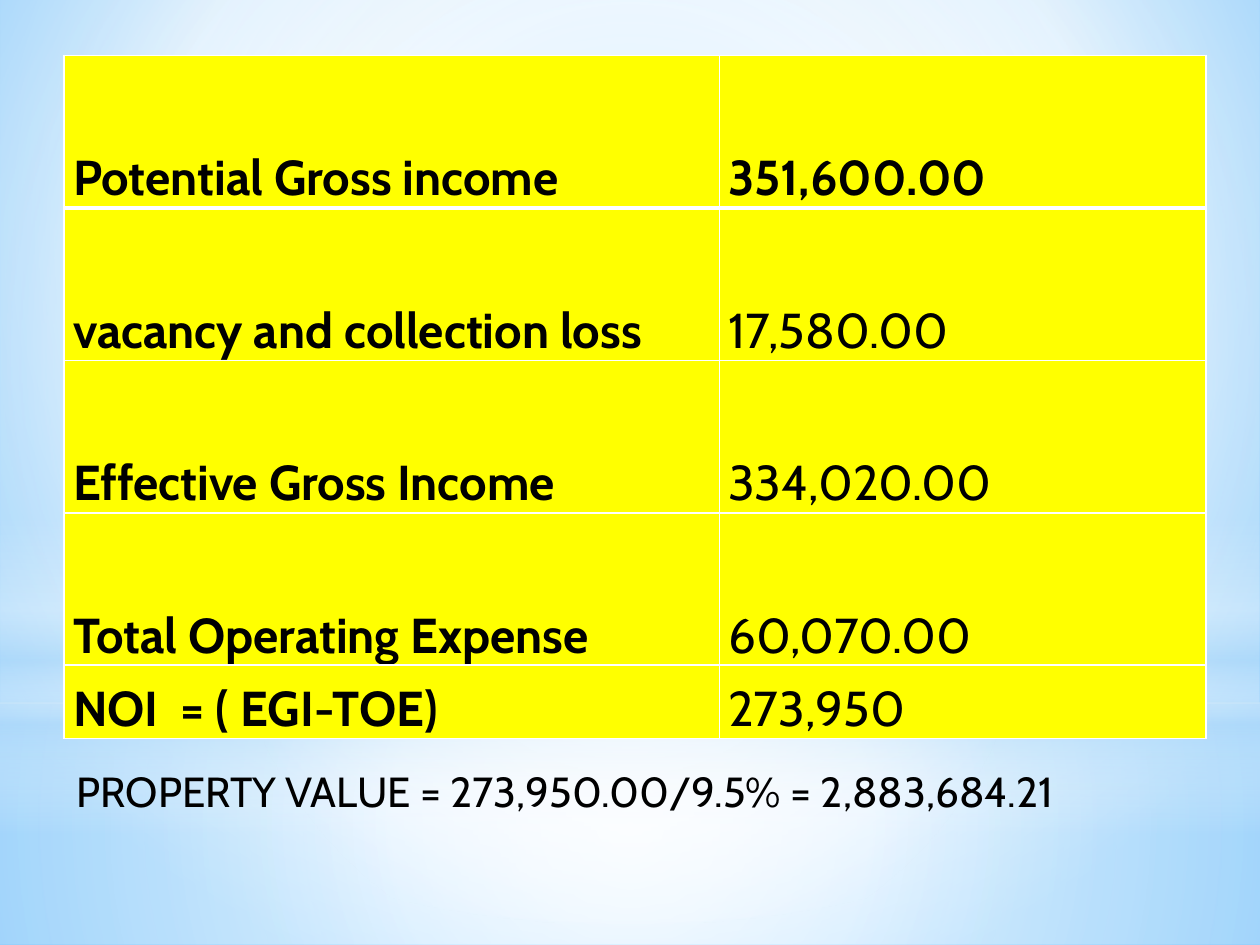
from lxml import etree
from pptx import Presentation
from pptx import util as u
from pptx.dml.color import RGBColor
from pptx.enum import shapes, text
from pptx.oxml.ns import qn

COLORS = {"deep": "5BB9FF", "sky": "9ED5FF", "pale": "B4DCFA", "white": "FFFFFF",
          "yellow": "FFFF00", "black": "000000"}
ROWS = [("Potential Gross income ", "351,600.00"),
        ("vacancy and collection loss ", "17,580.00"),
        ("Effective Gross Income", "334,020.00"),
        ("Total Operating Expense ", "60,070.00"),
        ("NOI  = ( EGI-TOE) ", "273,950")]
CENTER = (50, 50, 50, 50)


def write(frame, content, size, bold=False, align=None, spacing=None):
    """Put one formatted paragraph into a text frame."""
    paragraph = frame.paragraphs[0]
    paragraph.alignment = align
    paragraph.line_spacing = spacing
    run = paragraph.add_run()
    run.text = content
    font = run.font
    font.name, font.size, font.bold = "Cabin", u.Pt(size), bold
    font.color.rgb = RGBColor.from_string(COLORS["black"])


def add_color(parent, color, opacity=100):
    """Append a colour element with its opacity in percent."""
    node = etree.SubElement(parent, qn("a:srgbClr"), val=COLORS[color])
    if opacity < 100:
        etree.SubElement(node, qn("a:alpha"), val=str(opacity * 1000))


def paint_gradient(fill, owner, stops, focus=None):
    """Fill with a circular gradient around a focus, or with a vertical one."""
    fill.gradient()
    gradient = next(owner.iter(qn("a:gradFill")))
    for child in list(gradient):
        gradient.remove(child)
    stop_list = etree.SubElement(gradient, qn("a:gsLst"))
    for position, color, opacity in stops:
        stop = etree.SubElement(stop_list, qn("a:gs"), pos=str(position * 1000))
        add_color(stop, color, opacity)
    if focus:
        circle = etree.SubElement(gradient, qn("a:path"), path="circle")
        sides = {side: str(value * 1000) for side, value in zip("ltrb", focus)}
        etree.SubElement(circle, qn("a:fillToRect"), **sides)
    else:
        etree.SubElement(gradient, qn("a:lin"), ang="5400000", scaled="0")


class SlideBuilder:
    """Holds the current slide and its style."""

    def __init__(self, slide):
        """Keep the slide to draw on."""
        self.slide = slide

    def background(self, stops, focus):
        """Paint the slide background."""
        paint_gradient(self.slide.background.fill, self.slide.element, stops, focus)

    def glow(self, kind, top, height, stops, focus=None):
        """Add a full-width shape with a translucent gradient."""
        shape = self.slide.shapes.add_shape(
            kind, 0, u.Inches(top), u.Inches(10), u.Inches(height))
        shape.shadow.inherit = False
        shape.line.fill.background()
        paint_gradient(shape.fill, shape.element, stops, focus)

    def border(self, cell, side, width):
        """Add one white border to a cell."""
        properties = cell._tc.get_or_add_tcPr()
        line = etree.SubElement(properties, qn(f"a:ln{side}"), w=str(u.Pt(width)))
        add_color(etree.SubElement(line, qn("a:solidFill")), "white")

    def table(self, left, top, widths, heights, rows):
        """Add the income table with its labels in bold."""
        table = self.slide.shapes.add_table(
            len(rows), len(widths), u.Inches(left), u.Inches(top),
            u.Inches(sum(widths)), u.Inches(sum(heights))).table
        for column, width in zip(table.columns, widths):
            column.width = u.Inches(width)
        for row, height in zip(table.rows, heights):
            row.height = u.Inches(height)
        for r, values in enumerate(rows):
            for c, value in enumerate(values):
                cell = table.cell(r, c)
                cell.margin_left = cell.margin_right = u.Inches(0.07)
                cell.margin_top = cell.margin_bottom = 0
                cell.vertical_anchor = text.MSO_ANCHOR.BOTTOM
                widths_by_side = {"L": 1, "R": 1, "T": 3 if r == 1 else 1,
                                  "B": 3 if r == 0 else 1}
                for side, width in widths_by_side.items():
                    self.border(cell, side, width)
                cell.fill.solid()
                cell.fill.fore_color.rgb = RGBColor.from_string(COLORS["yellow"])
                write(cell.text_frame, value, 28, bold=r == 0 or c == 0,
                      align=text.PP_ALIGN.JUSTIFY, spacing=1.15)

    def label(self, left, top, width, height, content):
        """Add a text box."""
        frame = self.slide.shapes.add_textbox(
            *map(u.Inches, (left, top, width, height))).text_frame
        frame.word_wrap = True
        frame.auto_size = text.MSO_AUTO_SIZE.SHAPE_TO_FIT_TEXT
        write(frame, content, 24)


def main():
    """Build and save the presentation."""
    presentation = Presentation()
    presentation.slide_width, presentation.slide_height = u.Inches(10), u.Inches(7.5)
    builder = SlideBuilder(presentation.slides.add_slide(presentation.slide_layouts[6]))
    rectangle, oval = shapes.MSO_SHAPE.RECTANGLE, shapes.MSO_SHAPE.OVAL

    builder.background([(0, "sky", 100), (60, "white", 100), (100, "deep", 100)],
                       (20, 10, 20, 60))
    builder.glow(rectangle, 5.58, 1.92,
                 [(0, "white", 91), (37, "white", 76), (100, "pale", 79)], CENTER)
    builder.glow(rectangle, 0, 5.58,
                 [(0, "white", 89), (48, "white", 62), (100, "pale", 79)], CENTER)
    builder.glow(rectangle, 4.12, 2.5,
                 [(0, "white", 0), (29, "white", 30), (45, "pale", 40),
                  (55, "white", 26), (65, "pale", 60), (100, "white", 0)])
    builder.glow(oval, 1.75, 5.58, [(0, "white", 100), (56, "white", 0)], CENTER)

    builder.table(0.51, 0.44, [5.2, 3.86], [1.21] * 4 + [0.58], ROWS)
    builder.label(0.51, 6.03, 9.06, 0.5,
                  "PROPERTY VALUE = 273,950.00/9.5% = 2,883,684.21")
    presentation.save("out.pptx")


if __name__ == "__main__":
    main()
